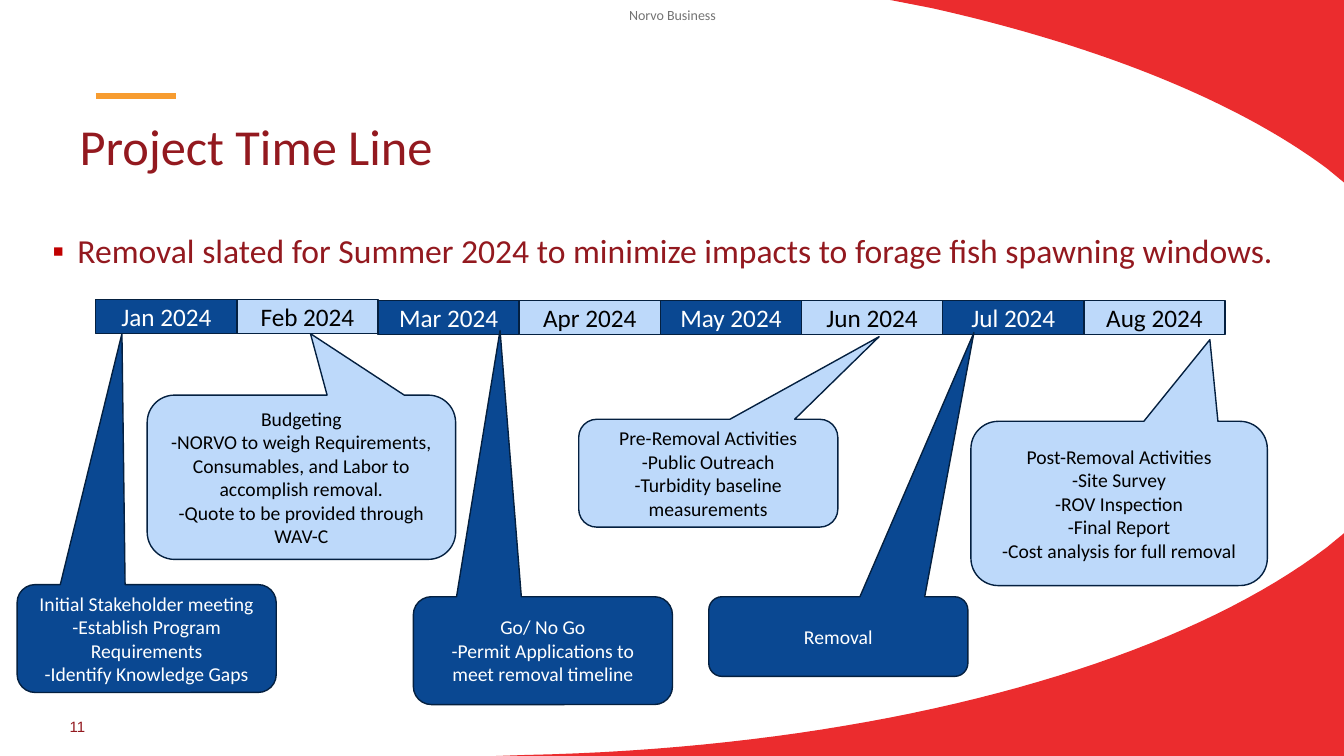
from lxml import etree
from pptx import Presentation
from pptx.dml import color
from pptx.enum import shapes, text
from pptx.oxml import ns
from pptx.util import Inches, Pt

NAVY, SKY, OUTLINE = "0A4892", "BDD9FA", "042040"
WHITE, BLACK = "FFFFFF", "000000"
CRIMSON, RED, ORANGE, GREY = "93191F", "EB2C2E", "F79C30", "737373"
BULLET = "C00000"

MONTHS = ["Jan", "Feb", "Mar", "Apr", "May", "Jun", "Jul", "Aug"]
MONTH_LEFT, MONTH_WIDTH = 0.95, 1.4

CALLOUTS = [
    ((0.17, 5.8, 2.57, 1.07), (1.21, 3.31), NAVY,
     ["Initial Stakeholder meeting", "-Establish Program Requirements",
      "-Identify Knowledge Gaps"]),
    ((1.46, 3.92, 3.06, 1.63), (3.08, 3.31), SKY,
     ["Budgeting",
      "-NORVO to weigh Requirements, Consumables, and Labor to accomplish removal.",
      "-Quote to be provided through WAV-C"]),
    ((4.1, 5.92, 2.57, 1.07), (4.96, 3.28), NAVY,
     ["Go/ No Go", "-Permit Applications to meet removal timeline"]),
    ((5.74, 4.16, 2.57, 1.07), (8.72, 3.34), SKY,
     ["Pre-Removal Activities", "-Public Outreach",
      "-Turbidity baseline measurements"]),
    ((7.03, 5.92, 2.57, 0.79), (9.66, 3.3), NAVY, ["Removal"]),
    ((9.63, 4.18, 2.94, 1.63), (12.0, 3.37), SKY,
     ["Post-Removal Activities", "-Site Survey", "-ROV Inspection",
      "-Final Report", "-Cost analysis for full removal"]),
]


def rgb(value):
    return color.RGBColor.from_string(value)


def add_bullet(para, symbol, indent):
    properties = para._p.get_or_add_pPr()
    properties.set("marL", str(Inches(indent)))
    properties.set("indent", str(-Inches(indent)))
    tint = etree.SubElement(properties, ns.qn("a:buClr"))
    etree.SubElement(tint, ns.qn("a:srgbClr"), val=BULLET)
    etree.SubElement(properties, ns.qn("a:buFont"), typeface="Arial")
    etree.SubElement(properties, ns.qn("a:buChar"), char=symbol)


def write(box, lines, size, ink, font="Calibri", align=text.PP_ALIGN.LEFT,
          anchor=text.MSO_ANCHOR.MIDDLE, spacing=None, bullet=None, inset=None):
    frame = box.text_frame
    frame.word_wrap = True
    frame.vertical_anchor = anchor
    if inset is not None:
        frame.margin_left = frame.margin_right = Inches(inset)
        frame.margin_top = frame.margin_bottom = Inches(inset)
    for index, line in enumerate(lines):
        para = frame.add_paragraph() if index else frame.paragraphs[0]
        para.alignment = align
        if spacing:
            para.line_spacing = spacing
        if bullet:
            add_bullet(para, bullet, 0.25)
        span = para.add_run()
        span.text = line
        span.font.name = font
        span.font.size = Pt(size)
        span.font.color.rgb = rgb(ink)


def add_label(page, content, place, **style):
    box = page.shapes.add_textbox(*map(Inches, place))
    write(box, [content], **style)


def paint(shape, fill, line=None):
    shape.shadow.inherit = False
    shape.fill.solid()
    shape.fill.fore_color.rgb = rgb(fill)
    if line:
        shape.line.color.rgb = rgb(line)
        shape.line.width = Pt(1)
    else:
        shape.line.fill.background()


def add_panel(page, kind, place, fill, lines, size):
    panel = page.shapes.add_shape(kind, *map(Inches, place))
    paint(panel, fill, OUTLINE)
    ink = WHITE if fill == NAVY else BLACK
    write(panel, lines, size, ink, align=text.PP_ALIGN.CENTER)
    return panel


def add_callout(page, place, tip, fill, lines):
    kind = shapes.MSO_SHAPE.ROUNDED_RECTANGULAR_CALLOUT
    callout = add_panel(page, kind, place, fill, lines, 14)
    left, top, width, height = place
    callout.adjustments[0] = (tip[0] - left) / width - 0.5
    callout.adjustments[1] = (tip[1] - top) / height - 0.5


def curve(start, first, second, end, steps=40):
    points = []
    for step in range(steps + 1):
        t = step / steps
        weights = ((1 - t) ** 3, 3 * t * (1 - t) ** 2, 3 * t * t * (1 - t), t ** 3)
        points.append(tuple(
            sum(weight * value for weight, value in zip(weights, axis))
            for axis in zip(start, first, second, end)))
    return points


def add_swoosh(page, points):
    corners = [(Inches(x), Inches(y)) for x, y in points]
    builder = page.shapes.build_freeform(*corners[0])
    builder.add_line_segments(corners[1:], close=True)
    paint(builder.convert_to_shape(), RED)


def add_rule(page, left, right, level):
    rule = page.shapes.add_connector(
        shapes.MSO_CONNECTOR.STRAIGHT,
        *map(Inches, (left, level, right, level)))
    rule.line.color.rgb = rgb(ORANGE)
    rule.line.width = Pt(4.5)
    etree.SubElement(rule._element.spPr, ns.qn("a:effectLst"))


def main():
    deck = Presentation()
    deck.slide_width, deck.slide_height = Inches(13.33), Inches(7.5)
    page = deck.slides.add_slide(deck.slide_layouts[6])

    add_swoosh(page, [(13.33, 5.29), (13.33, 7.5), (4.92, 7.5)] + curve(
        (5.21, 7.49), (8.65, 7.42), (11.61, 6.61), (13.16, 5.43)))
    add_swoosh(page, [(8.83, 0), (13.33, 0), (13.33, 1.81)] + curve(
        (13.16, 1.67), (12.26, 1), (10.89, 0.45), (9.24, 0.08)))

    add_label(page, "11", (0.69, 7.09, 0.42, 0.23), size=10.7, ink=CRIMSON,
              font="Arial", inset=0)
    add_label(page, "Norvo Business", (6.1, 0, 1.14, 0.29), size=10, ink=GREY,
              align=text.PP_ALIGN.CENTER, inset=0)
    add_label(page, "Project Time Line", (0.69, 1, 5.19, 0.95), size=36,
              ink=CRIMSON, spacing=0.9)
    add_label(page, "Removal slated for Summer 2024 to minimize impacts to "
              "forage fish spawning windows.", (0.42, 2.28, 12.58, 0.61),
              size=24, ink=CRIMSON, anchor=text.MSO_ANCHOR.TOP, spacing=0.9,
              bullet="▪")
    add_rule(page, 0.95, 1.75, 0.95)

    for index, month in enumerate(MONTHS):
        top = 2.97 if index < 2 else 2.98
        place = (MONTH_LEFT + index * MONTH_WIDTH, top, MONTH_WIDTH, 0.34)
        add_panel(page, shapes.MSO_SHAPE.RECTANGLE, place,
                  SKY if index % 2 else NAVY, [f"{month} 2024"], 18)
    for callout in CALLOUTS:
        add_callout(page, *callout)

    deck.save("out.pptx")


if __name__ == "__main__":
    main()
